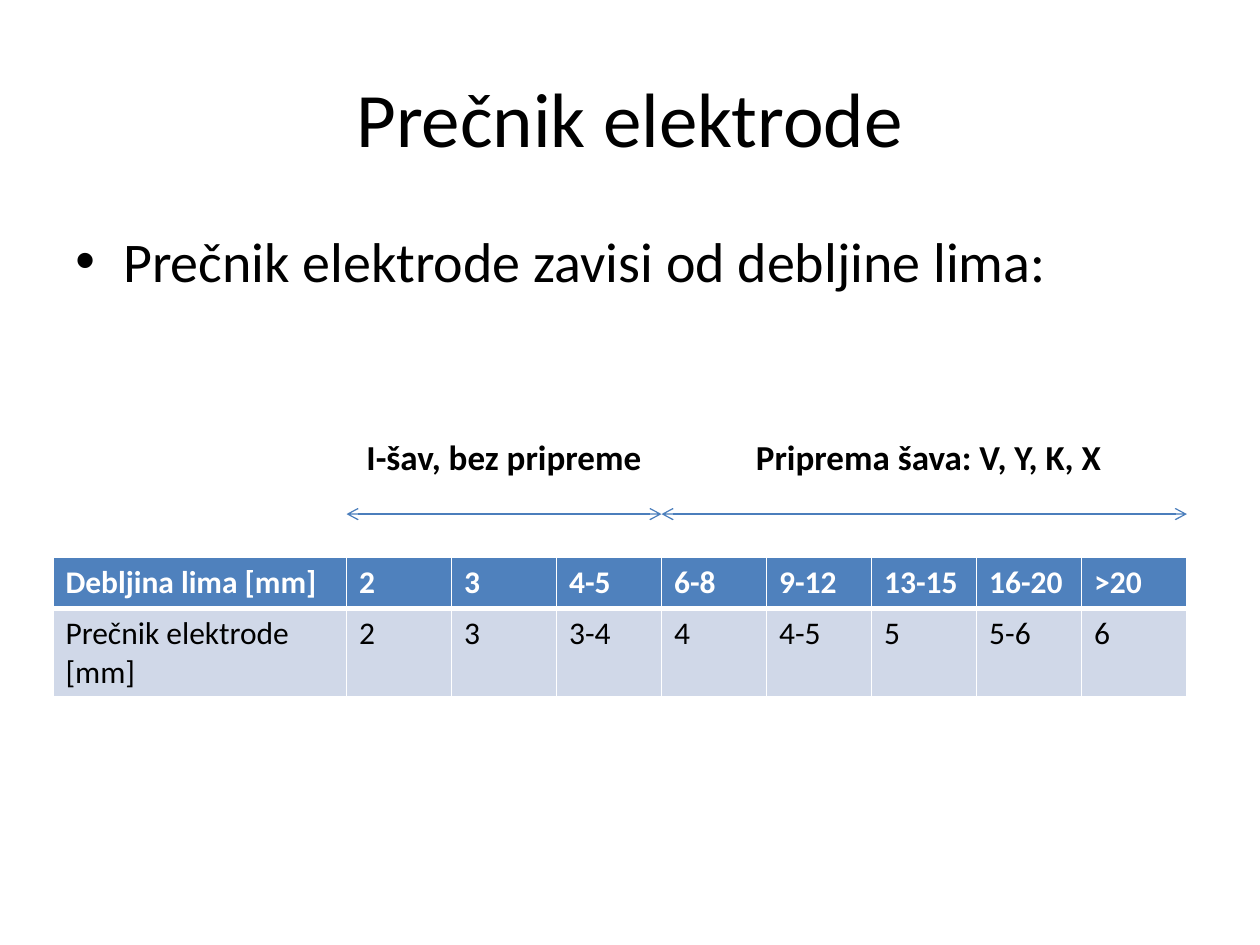
import pptx
import pptx.dml.color
import pptx.enum.shapes
import pptx.enum.text
import pptx.oxml
import pptx.oxml.ns
import pptx.util
import lxml.etree

Inches = pptx.util.Inches
Pt = pptx.util.Pt
RGBColor = pptx.dml.color.RGBColor
qn = pptx.oxml.ns.qn
Anchor = pptx.enum.text.MSO_ANCHOR
Align = pptx.enum.text.PP_ALIGN

BLACK = RGBColor(0x00, 0x00, 0x00)
WHITE = RGBColor(0xFF, 0xFF, 0xFF)
HEADER_BLUE = RGBColor(0x4F, 0x81, 0xBD)
ROW_BLUE = RGBColor(0xD0, 0xD8, 0xE8)
ARROW_BLUE = RGBColor(0x4B, 0x7E, 0xBC)

TABLE_LEFT, TABLE_TOP, TABLE_WIDTH = 0.42, 4.42, 9
LABEL_WIDTH = 2.33
ROW_HEIGHTS = [0.41, 0.7]
ROWS = [
    ["Debljina lima [mm]", "2", "3", "4-5", "6-8", "9-12", "13-15", "16-20", ">20"],
    ["Prečnik elektrode [mm]", "2", "3", "3-4", "4", "4-5", "5", "5-6", "6"],
]
VALUE_WIDTH = (TABLE_WIDTH - LABEL_WIDTH) / (len(ROWS[0]) - 1)


class SlideBuilder:
    """Draws styled elements on the current slide."""

    def __init__(self, page, font="Calibri"):
        self.page = page
        self.font = font

    def add_span(self, para, text, size, color=BLACK, bold=False):
        span = para.add_run()
        span.text = text
        span.font.name = self.font
        span.font.size = Pt(size)
        span.font.bold = bold
        span.font.color.rgb = color

    def text(self, left, top, width, height, text, size, bold=False,
             align=Align.CENTER, anchor=Anchor.TOP):
        box = self.page.shapes.add_textbox(
            Inches(left), Inches(top), Inches(width), Inches(height))
        box.text_frame.word_wrap = True
        box.text_frame.vertical_anchor = anchor
        para = box.text_frame.paragraphs[0]
        para.alignment = align
        self.add_span(para, text, size, bold=bold)
        return para

    def bullet(self, left, top, width, height, text, size):
        para = self.text(left, top, width, height, text, size, align=Align.LEFT)
        para.space_before = Pt(size * 0.2)
        properties = para._p.get_or_add_pPr()
        properties.set("marL", str(Inches(0.38)))
        properties.set("indent", str(Inches(-0.38)))
        lxml.etree.SubElement(properties, qn("a:buFont")).set("typeface", "Arial")
        lxml.etree.SubElement(properties, qn("a:buChar")).set("char", "•")

    def double_arrow(self, start, end, height):
        arrow = self.page.shapes.add_connector(
            pptx.enum.shapes.MSO_CONNECTOR.STRAIGHT,
            Inches(start), Inches(height), Inches(end), Inches(height))
        arrow.line.color.rgb = ARROW_BLUE
        arrow.line.width = Pt(0.75)
        line = arrow.line._get_or_add_ln()
        for tip in ("a:headEnd", "a:tailEnd"):
            lxml.etree.SubElement(line, qn(tip)).set("type", "arrow")
        lxml.etree.SubElement(arrow._element.spPr, qn("a:effectLst"))

    def borders(self, cell, top, bottom):
        properties = cell._tc.get_or_add_tcPr()
        widths = {"lnL": 1, "lnR": 1, "lnT": top, "lnB": bottom}
        for index, (side, width) in enumerate(widths.items()):
            line = lxml.etree.Element(qn("a:" + side), w=str(Pt(width)))
            fill = lxml.etree.SubElement(line, qn("a:solidFill"))
            lxml.etree.SubElement(fill, qn("a:srgbClr")).set("val", str(WHITE))
            properties.insert(index, line)

    def table(self, rows):
        table = self.page.shapes.add_table(
            len(rows), len(rows[0]), Inches(TABLE_LEFT), Inches(TABLE_TOP),
            Inches(TABLE_WIDTH), Inches(sum(ROW_HEIGHTS))).table
        for index, column in enumerate(table.columns):
            column.width = Inches(VALUE_WIDTH if index else LABEL_WIDTH)
        for index, values in enumerate(rows):
            header = index == 0
            table.rows[index].height = Inches(ROW_HEIGHTS[index])
            for cell, value in zip(table.rows[index].cells, values):
                cell.fill.solid()
                cell.fill.fore_color.rgb = HEADER_BLUE if header else ROW_BLUE
                self.borders(cell, 1 if header else 3, 3 if header else 1)
                self.add_span(cell.text_frame.paragraphs[0], value, 18,
                              WHITE if header else BLACK, header)


def main():
    deck = pptx.Presentation()
    deck.slide_width, deck.slide_height = Inches(10), Inches(7.5)
    builder = SlideBuilder(deck.slides.add_slide(deck.slide_layouts[6]))
    builder.text(0.5, 0.3, 9, 1.25, "Prečnik elektrode", 44, anchor=Anchor.MIDDLE)
    builder.bullet(0.5, 1.75, 9, 4.95, "Prečnik elektrode zavisi od debljine lima:", 32)
    builder.table(ROWS)
    for start, end in ((2.75, 5.25), (5.25, 9.42)):
        builder.double_arrow(start, end, 4.08)
    builder.text(2.75, 3.41, 2.5, 0.44, "I-šav, bez pripreme", 20, bold=True)
    builder.text(5.33, 3.41, 4.08, 0.44, "Priprema šava: V, Y, K, X", 20, bold=True)
    deck.save("out.pptx")


if __name__ == "__main__":
    main()
